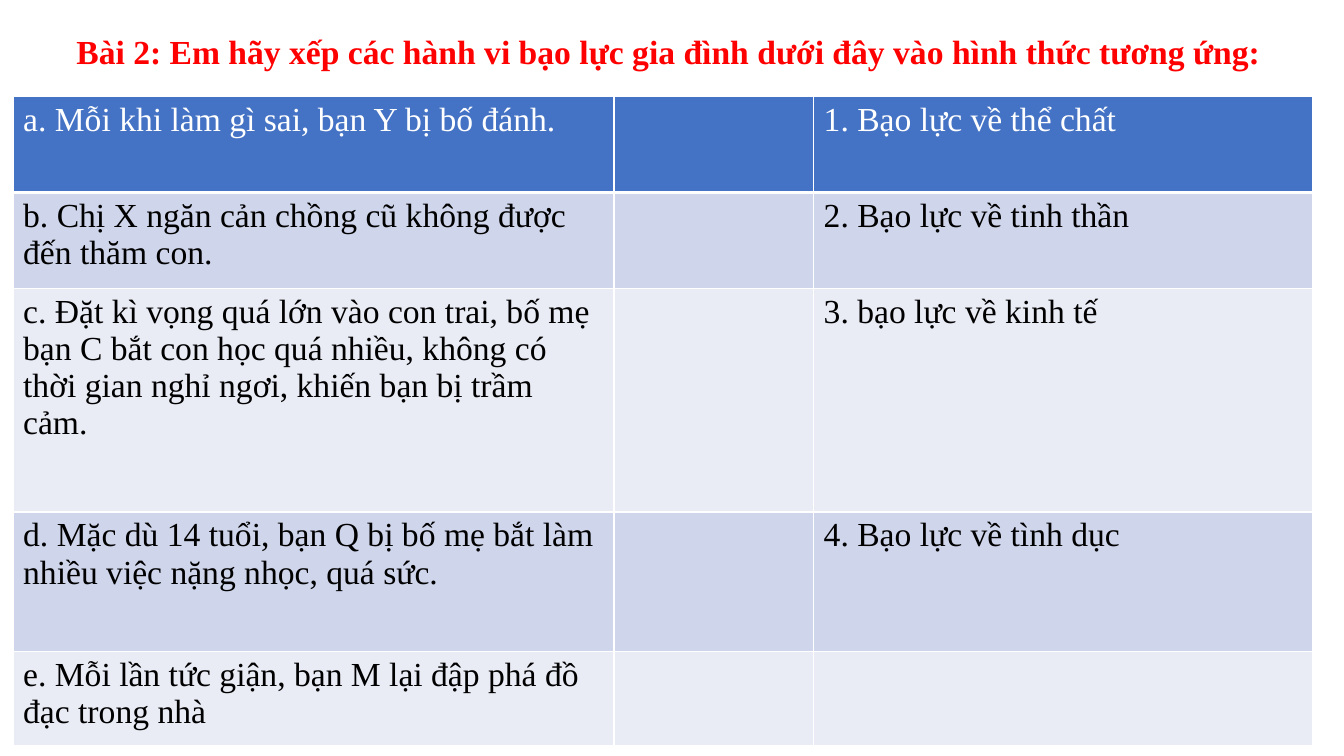
from lxml import etree
from pptx import Presentation
from pptx.dml.color import RGBColor
from pptx.enum.text import MSO_AUTO_SIZE
from pptx.oxml.ns import qn
from pptx.util import Inches, Pt

SHAPE_TO_FIT_TEXT = MSO_AUTO_SIZE.SHAPE_TO_FIT_TEXT

TITLE = "Bài 2: Em hãy xếp các hành vi bạo lực gia đình dưới đây vào hình thức tương ứng:"
ROWS = [
    ("a. Mỗi khi làm gì sai, bạn Y bị bố đánh.", "1. Bạo lực về thể chất"),
    ("b. Chị X ngăn cản chồng cũ không được đến thăm con.", "2. Bạo lực về tinh thần"),
    ("c. Đặt kì vọng quá lớn vào con trai, bố mẹ bạn C bắt con học quá nhiều, "
     "không có thời gian nghỉ ngơi, khiến bạn bị trầm cảm.", "3. bạo lực về kinh tế"),
    ("d. Mặc dù 14 tuổi, bạn Q bị bố mẹ bắt làm nhiều việc nặng nhọc, quá sức.",
     "4. Bạo lực về tình dục"),
    ("e. Mỗi lần tức giận, bạn M lại đập phá đồ đạc trong nhà", ""),
]
COLUMN_WIDTHS = [5.96, 1.98, 4.95]
ROW_HEIGHTS = [0.95, 0.95, 2.22, 1.38, 0.94]


def color(value):
    return RGBColor.from_string(value)


class SlideBuilder:
    font_format = {"name": "Times New Roman", "size": Pt(24)}
    header_fill = "4472C4"
    band_fills = ("E9EBF5", "CFD5EA")
    border_color = "FFFFFF"

    def __init__(self, slide):
        self.slide = slide

    def add_text(self, text_frame, text, text_color, bold=False):
        run = text_frame.paragraphs[0].add_run()
        run.text = text
        for name, value in {**self.font_format, "bold": bold}.items():
            setattr(run.font, name, value)
        run.font.color.rgb = color(text_color)

    def add_title(self, text, left, top, width, height):
        box = self.slide.shapes.add_textbox(
            Inches(left), Inches(top), Inches(width), Inches(height))
        text_frame = box.text_frame
        text_frame.word_wrap = True
        text_frame.auto_size = SHAPE_TO_FIT_TEXT
        self.add_text(text_frame, text, "FF0000", bold=True)

    def set_borders(self, cell, widths):
        """Draw cell borders from a dict of side letter to width in points."""
        properties = cell._tc.get_or_add_tcPr()
        for position, (side, width) in enumerate(widths.items()):
            line = etree.Element(qn(f"a:ln{side}"), w=str(Pt(width)))
            fill = etree.SubElement(line, qn("a:solidFill"))
            etree.SubElement(fill, qn("a:srgbClr"), val=self.border_color)
            properties.insert(position, line)

    def add_matching_table(self, rows, left, top):
        """Add a table with an empty answer column between the two lists."""
        table = self.slide.shapes.add_table(
            len(rows), len(COLUMN_WIDTHS), Inches(left), Inches(top),
            Inches(sum(COLUMN_WIDTHS)), Inches(sum(ROW_HEIGHTS))).table
        for column, width in zip(table.columns, COLUMN_WIDTHS):
            column.width = Inches(width)
        for index, (behaviour, violence_type) in enumerate(rows):
            table.rows[index].height = Inches(ROW_HEIGHTS[index])
            is_header = index == 0
            fill = self.header_fill if is_header else self.band_fills[index % 2]
            text_color = "FFFFFF" if is_header else "000000"
            widths = {"L": 1, "R": 1, "T": 3 if index == 1 else 1, "B": 3 if is_header else 1}
            for cell, text in zip(table.rows[index].cells, (behaviour, "", violence_type)):
                cell.fill.solid()
                cell.fill.fore_color.rgb = color(fill)
                self.set_borders(cell, widths)
                if text:
                    self.add_text(cell.text_frame, text, text_color)


def main():
    presentation = Presentation()
    presentation.slide_width = Inches(13.33)
    presentation.slide_height = Inches(7.5)
    builder = SlideBuilder(presentation.slides.add_slide(presentation.slide_layouts[6]))
    builder.add_title(TITLE, 0.66, 0.26, 12.14, 0.5)
    builder.add_matching_table(ROWS, 0.13, 0.96)
    presentation.save("out.pptx")


if __name__ == "__main__":
    main()
